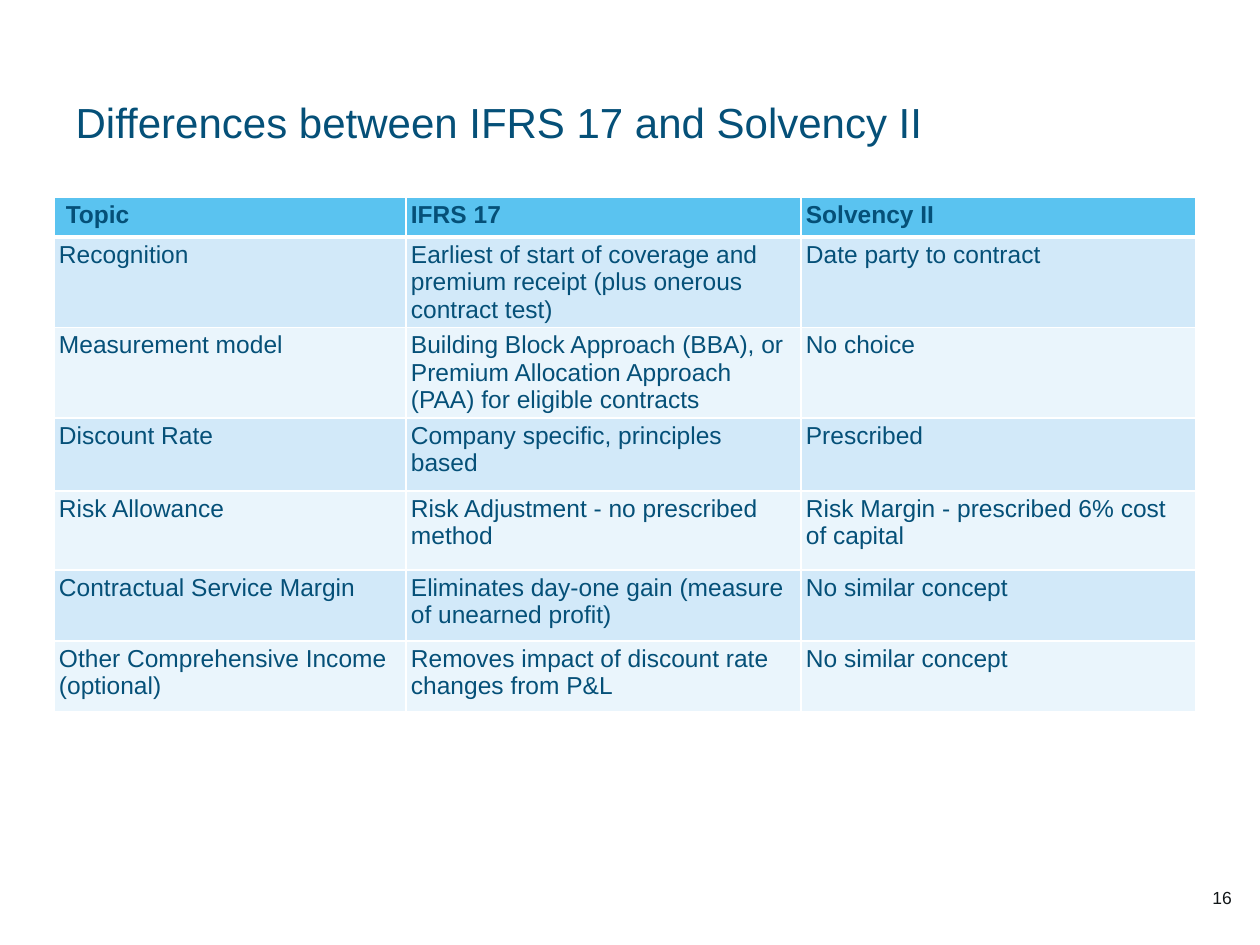
from dataclasses import dataclass

from lxml import etree
from pptx import Presentation
from pptx.dml.color import RGBColor
from pptx.enum.text import MSO_ANCHOR, PP_ALIGN
from pptx.oxml.ns import qn
from pptx.util import Emu, Pt

MIDDLE = MSO_ANCHOR.MIDDLE
TOP = MSO_ANCHOR.TOP
LEFT = PP_ALIGN.LEFT
SCALE = 914400 / 126  # EMU in one px


@dataclass(frozen=True)
class Theme:
    font: str = "Arial"
    ink: str = "055078"
    dark: str = "111618"
    head: str = "5AC3F0"
    bands: tuple[str, str] = ("D2E9F9", "EAF5FC")
    line: str = "FFFFFF"
    title: int = 24
    cell: int = 14
    page: int = 10


@dataclass(frozen=True)
class Row:
    height: int
    topic: str
    ifrs: str
    solv: str


THEME = Theme()
COLS = (352, 395, 395)
ROWS = (
    Row(40, "\u00a0Topic".replace("\u00a0", chr(160)), "IFRS 17", "Solvency II"),
    Row(68, "Recognition",
        "Earliest of start of coverage and premium receipt (plus onerous contract test)",
        "Date party to contract"),
    Row(73, "Measurement model",
        "Building Block Approach (BBA), or Premium Allocation Approach (PAA) "
        "for eligible contracts",
        "No choice"),
    Row(73, "Discount Rate", "Company specific, principles based", "Prescribed"),
    Row(79, "Risk Allowance", "Risk Adjustment - no prescribed method",
        "Risk Margin - prescribed 6% cost of capital"),
    Row(71, "Contractual Service Margin",
        "Eliminates day-one gain (measure of unearned profit)", "No similar concept"),
    Row(71, "Other Comprehensive Income (optional)",
        "Removes impact of discount rate changes from P&L", "No similar concept"),
)


def px(n: int) -> Emu:
    return Emu(round(n * SCALE))


def write(frame, text: str, size: int, color: str, bold: bool = False):
    """Add one run to the first paragraph and return that paragraph."""
    para = frame.paragraphs[0]
    para.alignment = LEFT
    run = para.add_run()
    run.text = text
    font = run.font
    font.name, font.size, font.bold = THEME.font, Pt(size), bold
    font.color.rgb = RGBColor.from_string(color)
    return para


def edge(cell, side: str, width: int) -> None:
    props = cell._tc.get_or_add_tcPr()
    line = etree.SubElement(props, qn(f"a:ln{side}"), w=str(Pt(width)))
    fill = etree.SubElement(line, qn("a:solidFill"))
    etree.SubElement(fill, qn("a:srgbClr"), val=THEME.line)


def draw_cell(cell, text: str, index: int) -> None:
    head = index == 0
    cell.margin_left = cell.margin_right = px(5)
    cell.margin_top = cell.margin_bottom = px(4)
    cell.vertical_anchor = TOP
    # The rule under the header is shared with the row below it
    widths = {"L": 1, "R": 1, "T": 3 if index == 1 else 1, "B": 3 if head else 1}
    for side, width in widths.items():
        edge(cell, side, width)
    cell.fill.solid()
    shade = THEME.head if head else THEME.bands[(index - 1) % 2]
    cell.fill.fore_color.rgb = RGBColor.from_string(shade)
    para = write(cell.text_frame, text, THEME.cell, THEME.ink, head)
    para.space_after = Pt(6)


def draw_table(slide, left: int, top: int) -> None:
    high = sum(row.height for row in ROWS)
    table = slide.shapes.add_table(
        len(ROWS), len(COLS), px(left), px(top), px(sum(COLS)), px(high)).table
    for col, width in zip(table.columns, COLS):
        col.width = px(width)
    for i, row in enumerate(ROWS):
        table.rows[i].height = px(row.height)
        for j, text in enumerate((row.topic, row.ifrs, row.solv)):
            draw_cell(table.cell(i, j), text, i)


def main() -> None:
    deck = Presentation()
    deck.slide_width, deck.slide_height = px(1260), px(945)
    slide = deck.slides.add_slide(deck.slide_layouts[5])

    # Title
    title = slide.shapes.title
    title.left, title.top = px(63), px(49)
    title.width, title.height = px(1134), px(146)
    title.text_frame.vertical_anchor = MIDDLE
    write(title.text_frame, "Differences between IFRS 17 and Solvency II",
          THEME.title, THEME.ink)

    # Comparison table
    draw_table(slide, 54, 197)

    # Page number
    page = slide.shapes.add_textbox(px(1200), px(873), px(65), px(50)).text_frame
    page.word_wrap = True
    page.vertical_anchor = MIDDLE
    write(page, "16", THEME.page, THEME.dark)

    deck.save("out.pptx")


if __name__ == "__main__":
    main()
